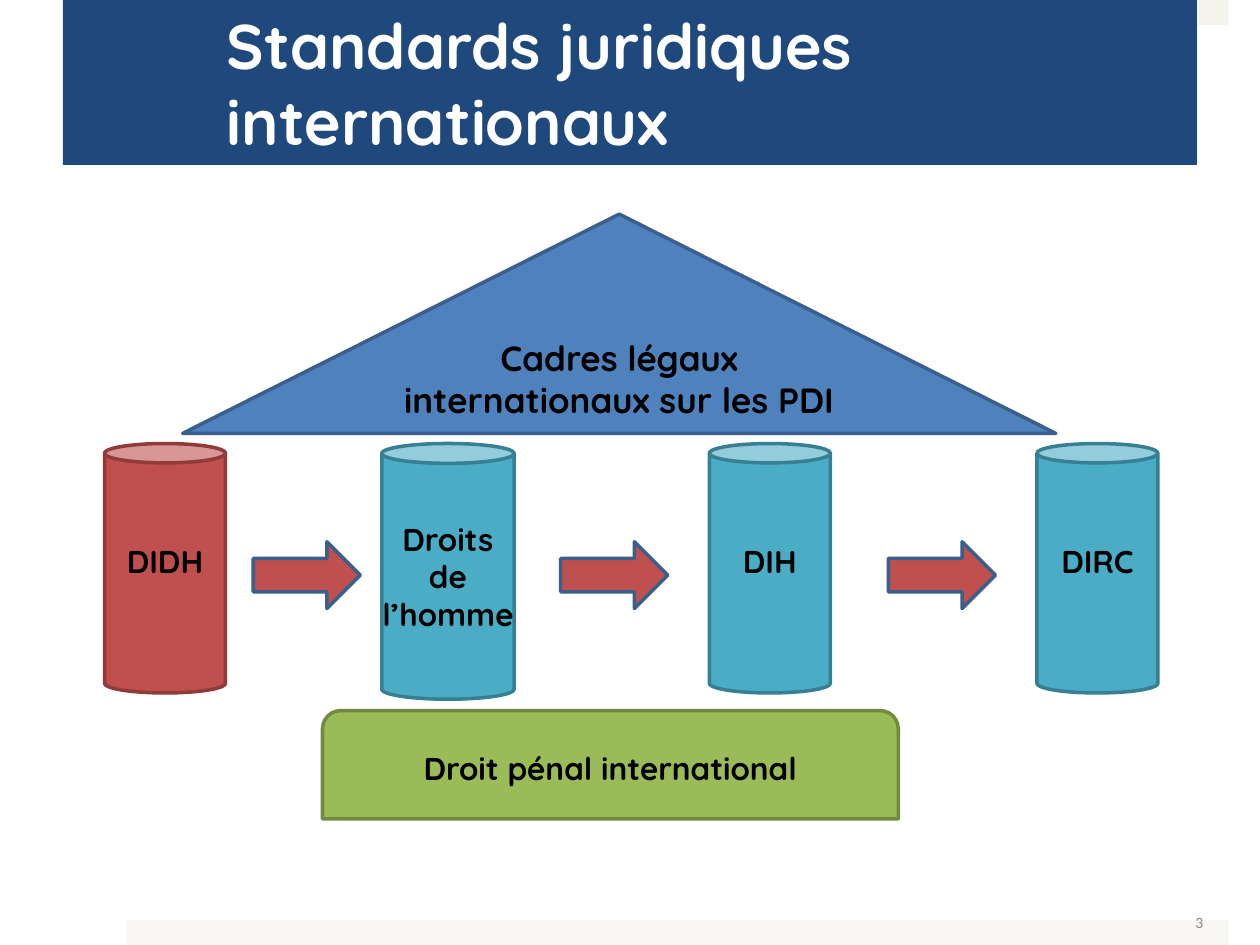
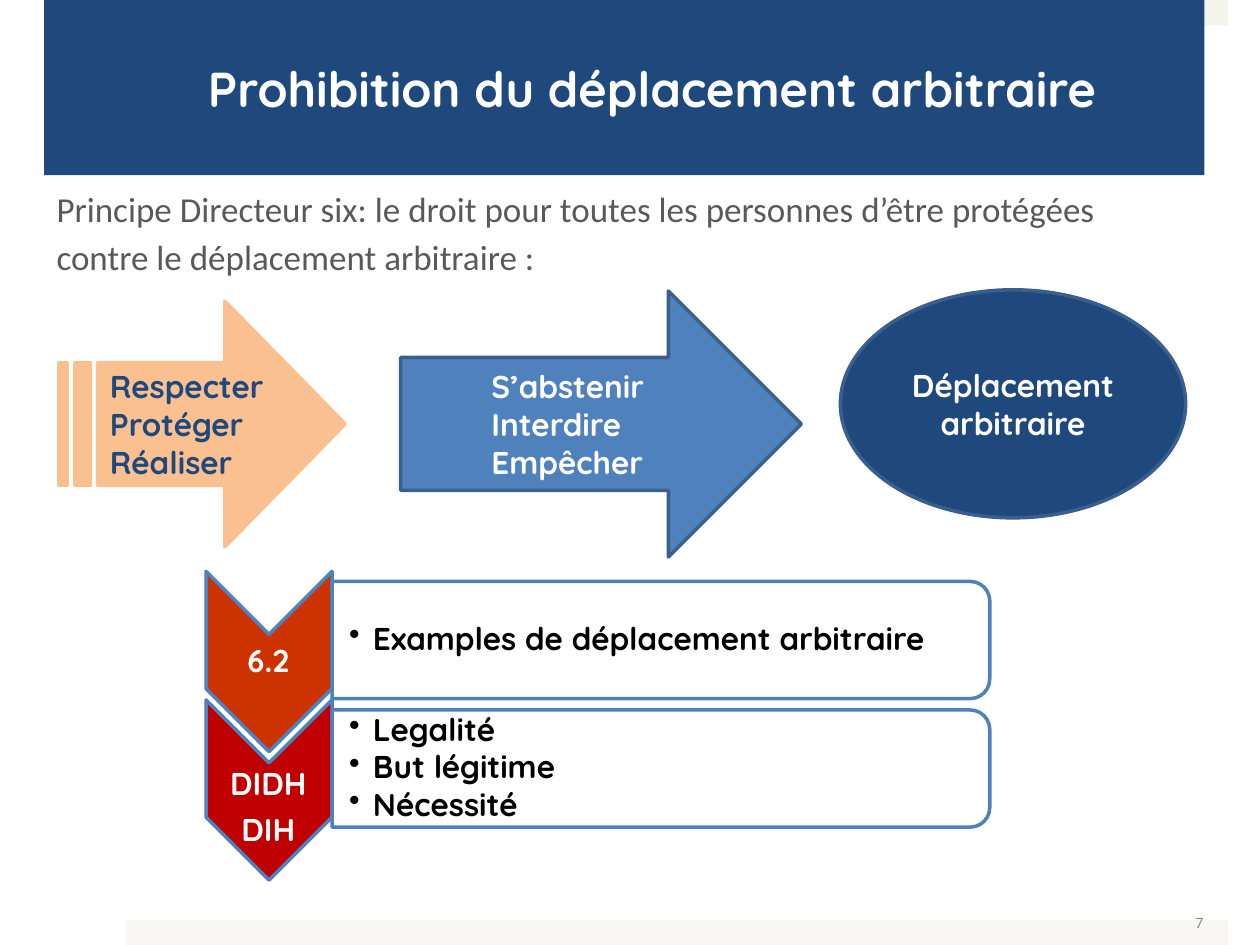
from dataclasses import dataclass
from typing import Optional

from lxml.etree import SubElement
from pptx import Presentation
from pptx.dml.color import RGBColor
from pptx.enum.shapes import MSO_SHAPE
from pptx.enum.text import MSO_ANCHOR, PP_ALIGN
from pptx.oxml.ns import qn
from pptx.util import Pt

PX = 9144  # one px is a hundredth of an inch

# Colours
WHITE = RGBColor(0xFF, 0xFF, 0xFF)
BLACK = RGBColor(0, 0, 0)
NAVY = RGBColor(0x1F, 0x49, 0x7D)
BLUE = RGBColor(0x4F, 0x81, 0xBD)
BLUE_EDGE = RGBColor(0x3A, 0x5F, 0x8C)
TEAL = RGBColor(0x4B, 0xAC, 0xC6)
TEAL_EDGE = RGBColor(0x37, 0x7F, 0x92)
RED = RGBColor(0xC0, 0x50, 0x4D)
RED_EDGE = RGBColor(0x8E, 0x3B, 0x39)
GREEN = RGBColor(0x9B, 0xBB, 0x59)
GREEN_EDGE = RGBColor(0x73, 0x8A, 0x42)
PEACH = RGBColor(0xFA, 0xC0, 0x90)
ORANGE = RGBColor(0xCC, 0x33, 0x00)
CRIMSON = RGBColor(0xC0, 0x00, 0x00)
TOP_BAND = RGBColor(0xF5, 0xF4, 0xED)
BOTTOM_BAND = RGBColor(0xF8, 0xF7, 0xF3)
BODY_GREY = RGBColor(0x59, 0x59, 0x59)
NUMBER_GREY = RGBColor(0x89, 0x89, 0x89)

HEADING_FONT = "Quicksand"
BODY_FONT = "Calibri"


@dataclass(frozen=True)
class TextStyle:
    size: int = 18
    color: RGBColor = BLACK
    font: str = HEADING_FONT
    bold: bool = True
    align: PP_ALIGN = PP_ALIGN.CENTER
    anchor: MSO_ANCHOR = MSO_ANCHOR.MIDDLE
    insets: tuple[int, int, int, int] = (10, 5, 10, 5)
    wrap: bool = True
    line_spacing: Optional[float] = None
    space_after: float = 0
    bullet_indent: int = 0


@dataclass(frozen=True)
class Part:
    geometry: MSO_SHAPE
    box: tuple[int, int, int, int]
    fill: RGBColor
    edge: Optional[RGBColor] = None
    text: str = ""
    style: TextStyle = TextStyle()
    adjustments: tuple[float, ...] = ()
    rotation: int = 0
    opacity: int = 100


@dataclass(frozen=True)
class Step:
    label: str
    label_height: int
    color: RGBColor
    points: str


def write(shape, text: str, style: TextStyle) -> None:
    frame = shape.text_frame
    frame.text = text
    frame.word_wrap = style.wrap
    frame.vertical_anchor = style.anchor
    (frame.margin_left, frame.margin_top,
     frame.margin_right, frame.margin_bottom) = [inset * PX for inset in style.insets]
    for paragraph in frame.paragraphs:
        if style.bullet_indent:
            properties = paragraph._p.get_or_add_pPr()
            properties.set("marL", str(style.bullet_indent * PX))
            properties.set("indent", str(-style.bullet_indent * PX))
            SubElement(properties, qn("a:buChar"), char="•")
        paragraph.alignment = style.align
        paragraph.space_after = Pt(style.space_after)
        if style.line_spacing:
            paragraph.line_spacing = style.line_spacing
        for run in paragraph.runs:
            run.font.name = style.font
            run.font.size = Pt(style.size)
            run.font.bold = style.bold
            run.font.color.rgb = style.color


def draw(slide, part: Part) -> None:
    shape = slide.shapes.add_shape(part.geometry, *[side * PX for side in part.box])
    shape.shadow.inherit = False
    shape.rotation = part.rotation
    for index, value in enumerate(part.adjustments):
        shape.adjustments[index] = value
    shape.fill.solid()
    shape.fill.fore_color.rgb = part.fill
    if part.opacity < 100:
        color = shape._element.spPr.find(f"{qn('a:solidFill')}/{qn('a:srgbClr')}")
        SubElement(color, qn("a:alpha"), val=str(part.opacity * 1000))
    if part.edge is None:
        shape.line.fill.background()
    else:
        shape.line.color.rgb = part.edge
        shape.line.width = Pt(2)
    if part.text:
        write(shape, part.text, part.style)


def add_text(slide, box: tuple[int, int, int, int], text: str, style: TextStyle) -> None:
    write(slide.shapes.add_textbox(*[side * PX for side in box]), text, style)


def start_slide(presentation, number: int, title: str, size: int,
                title_box: tuple[int, int, int, int]):
    """Add a blank slide with its bands, page number and title."""
    slide = presentation.slides.add_slide(presentation.slide_layouts[6])
    for top, color in ((0, TOP_BAND), (730, BOTTOM_BAND)):
        draw(slide, Part(MSO_SHAPE.RECTANGLE, (100, top, 875, 20), color))
    add_text(slide, (729, 712, 233, 40), str(number),
             TextStyle(9, NUMBER_GREY, BODY_FONT, False, PP_ALIGN.RIGHT, insets=(7, 4, 7, 4)))
    title_style = TextStyle(size, WHITE, align=PP_ALIGN.LEFT, insets=(130, 5, 30, 5))
    draw(slide, Part(MSO_SHAPE.RECTANGLE, title_box, NAVY, text=title, style=title_style))
    return slide


def build_standards(presentation) -> None:
    slide = start_slide(presentation, 3, "Standards juridiques internationaux", 36,
                        (50, 0, 900, 131))
    # Roof and base
    draw(slide, Part(MSO_SHAPE.ISOSCELES_TRIANGLE, (145, 170, 693, 174), BLUE, BLUE_EDGE,
                     "Cadres légaux\ninternationaux sur les PDI", TextStyle(20, wrap=False)))
    draw(slide, Part(MSO_SHAPE.ROUND_2_SAME_RECTANGLE, (256, 564, 457, 86), GREEN, GREEN_EDGE,
                     "Droit pénal international"))
    # Pillars
    pillar_top = 352
    raised = TextStyle(wrap=False, insets=(10, 5, 10, 25))
    for left, name, fill, edge in ((83, "DIDH", RED, RED_EDGE),
                                   (563, "DIH", TEAL, TEAL_EDGE),
                                   (823, "DIRC", TEAL, TEAL_EDGE)):
        draw(slide, Part(MSO_SHAPE.CAN, (left, pillar_top, 96, 198), fill, edge,
                         name, raised, (0.16,)))
    draw(slide, Part(MSO_SHAPE.CAN, (303, pillar_top, 105, 203), TEAL, TEAL_EDGE,
                     "Droits\nde\nl’homme", TextStyle(wrap=False), (0.15,)))
    # Arrows between pillars
    for left in (201, 445, 705):
        draw(slide, Part(MSO_SHAPE.RIGHT_ARROW, (left, 430, 85, 53), RED, BLUE_EDGE))


def build_prohibition(presentation) -> None:
    slide = start_slide(presentation, 7, "Prohibition du déplacement arbitraire", 28,
                        (35, 0, 921, 139))
    add_text(slide, (35, 139, 921, 559),
             "Principe Directeur six: le droit pour toutes les personnes d’être protégées "
             "contre le déplacement arbitraire :",
             TextStyle(20, BODY_GREY, BODY_FONT, False, PP_ALIGN.LEFT, MSO_ANCHOR.TOP,
                       line_spacing=1.15))
    # Duties leading to arbitrary displacement
    duties = (
        Part(MSO_SHAPE.RIGHT_ARROW, (318, 231, 318, 211), BLUE, BLUE_EDGE,
             "S’abstenir\nInterdire\nEmpêcher",
             TextStyle(color=WHITE, align=PP_ALIGN.LEFT, insets=(72, 5, 10, 5))),
        Part(MSO_SHAPE.OVAL, (667, 230, 274, 181), NAVY, BLUE_EDGE,
             "Déplacement\narbitraire", TextStyle(color=WHITE)),
        Part(MSO_SHAPE.STRIPED_RIGHT_ARROW, (47, 239, 227, 195), PEACH, PEACH,
             "Respecter\nProtéger\nRéaliser",
             TextStyle(color=NAVY, align=PP_ALIGN.LEFT), (0.5, 0.49)),
    )
    for duty in duties:
        draw(slide, duty)

    # Chevron list
    label_style = TextStyle(color=WHITE, insets=(1, 1, 1, 1), line_spacing=0.9, space_after=6.3)
    points_style = TextStyle(align=PP_ALIGN.LEFT, insets=(14, 1, 1, 1), line_spacing=0.9,
                             space_after=2, bullet_indent=19)
    steps = (
        Step("6.2", 43, ORANGE, "Examples de déplacement arbitraire"),
        Step("DIDH\nDIH", 71, CRIMSON, "Legalité\nBut légitime\nNécessité"),
    )
    step_pitch = 102
    for index, step in enumerate(steps):
        shift = index * step_pitch
        draw(slide, Part(MSO_SHAPE.CHEVRON, (142, 475 + shift, 143, 100), step.color, BLUE,
                         rotation=90))
        add_text(slide, (163, 504 + shift, 100, step.label_height), step.label, label_style)
        draw(slide, Part(MSO_SHAPE.ROUND_2_SAME_RECTANGLE, (478, 247 + shift, 93, 522), WHITE,
                         BLUE, rotation=90, opacity=90))
        add_text(slide, (263, 466 + shift, 518, 84), step.points, points_style)


def main() -> None:
    presentation = Presentation()
    presentation.slide_width = 1000 * PX
    presentation.slide_height = 750 * PX
    build_standards(presentation)
    build_prohibition(presentation)
    presentation.save("out.pptx")


if __name__ == "__main__":
    main()
